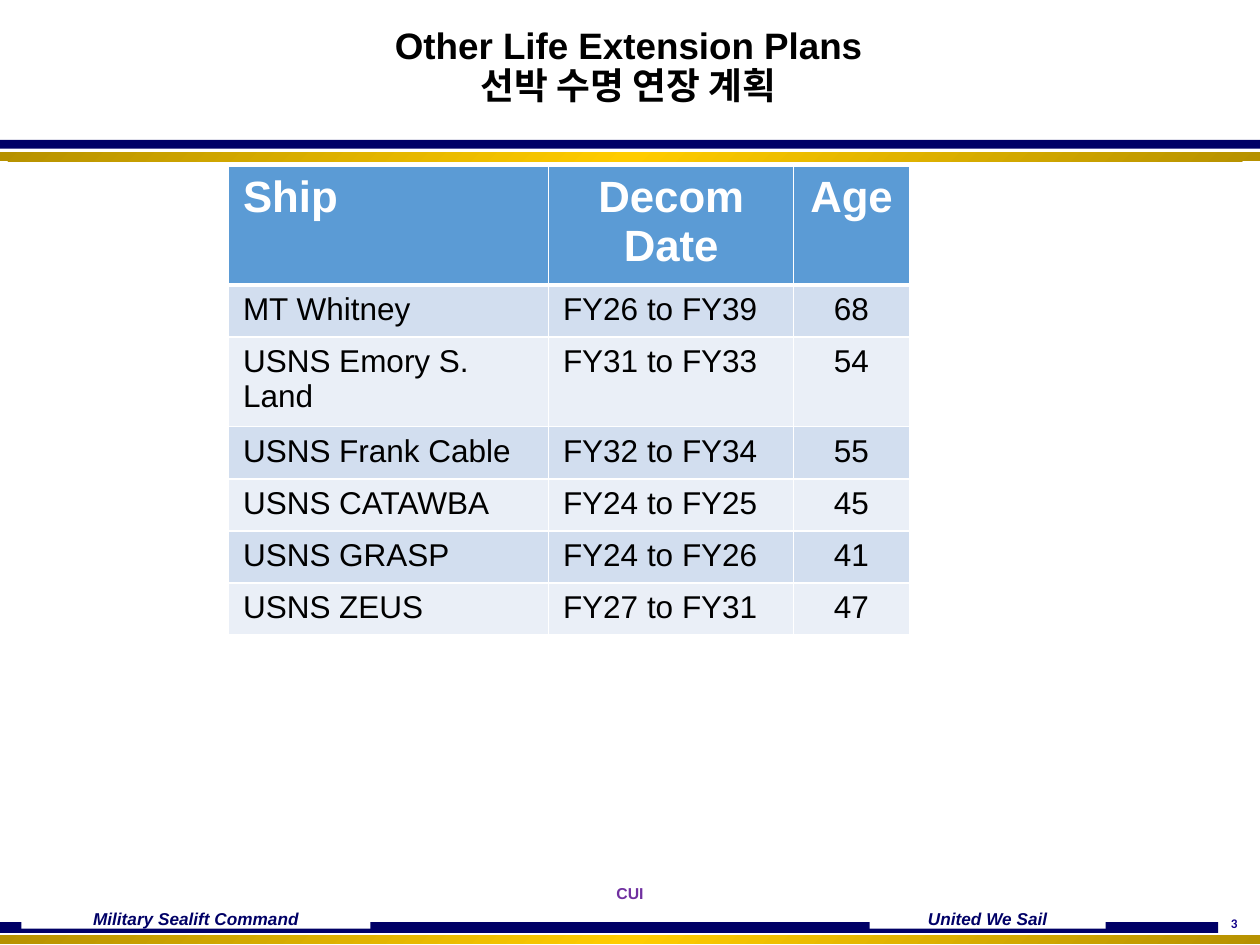
from dataclasses import dataclass
from typing import Any, NamedTuple

import pptx
import pptx.dml.color
import pptx.enum.shapes
import pptx.enum.text
import pptx.oxml
import pptx.oxml.ns
import pptx.util

Cm = pptx.util.Cm
Pt = pptx.util.Pt
CENTER = pptx.enum.text.PP_ALIGN.CENTER
LEFT = pptx.enum.text.PP_ALIGN.LEFT
TOP = pptx.enum.text.MSO_ANCHOR.TOP
MIDDLE = pptx.enum.text.MSO_ANCHOR.MIDDLE


@dataclass(frozen=True)
class Theme:
    navy: str = "000066"
    gold: str = "FFCC00"
    white: str = "FFFFFF"
    black: str = "000000"
    page_blue: str = "110189"
    marking_purple: str = "7030A0"
    header_blue: str = "5B9BD5"
    bands: tuple[str, str] = ("D2DEEF", "EAEFF7")
    title_size: float = 21
    header_size: float = 25
    body_size: float = 18
    motto_size: float = 9.8
    marking_size: float = 9
    page_size: float = 7.5
    font: str = "Arial"
    page_font: str = "Calibri"


THEME = Theme()


class Box(NamedTuple):
    """Position and size in centimetres."""
    left: float
    top: float
    width: float
    height: float

    def lengths(self) -> list[int]:
        return [Cm(value) for value in self]


class Label(NamedTuple):
    text: str
    box: Box
    size: float
    color: str
    anchor: Any = TOP
    italic: bool = False
    spacing: float = 1.0
    font: str = THEME.font
    wrap: bool = True
    fill: str | None = None
    side_only: bool = False


class Ship(NamedTuple):
    name: str
    decom: str
    age: str


def rgb(color: str) -> pptx.dml.color.RGBColor:
    return pptx.dml.color.RGBColor.from_string(color)


def apply(target: Any, values: dict[str, Any]) -> None:
    for attribute, value in values.items():
        setattr(target, attribute, value)


def style_font(font: Any, name: str, size: float, color: str,
               bold: bool = True, italic: bool = False) -> None:
    apply(font, {"name": name, "size": Pt(size), "bold": bold, "italic": italic})
    font.color.rgb = rgb(color)


def draw_bar(slide: Any, box: Box, color: str) -> Any:
    bar = slide.shapes.add_shape(
        pptx.enum.shapes.MSO_SHAPE.RECTANGLE, *box.lengths())
    bar.shadow.inherit = False
    bar.fill.solid()
    bar.fill.fore_color.rgb = rgb(color)
    bar.line.fill.background()
    return bar


def draw_gold_bar(slide: Any, box: Box) -> None:
    """Gold bar that darkens towards both ends."""
    bar = draw_bar(slide, box, THEME.gold)
    shade = '<a:shade val="46275"/>'
    stops = "".join(
        f'<a:gs pos="{pos}"><a:srgbClr val="{THEME.gold}">{change}</a:srgbClr></a:gs>'
        for pos, change in ((0, shade), (50000, ""), (100000, shade)))
    gradient = pptx.oxml.parse_xml(
        f'<a:gradFill {pptx.oxml.ns.nsdecls("a")} rotWithShape="1">'
        f'<a:gsLst>{stops}</a:gsLst><a:lin ang="2700000" scaled="1"/></a:gradFill>')
    properties = bar.fill._xPr
    properties.replace(properties.find(pptx.oxml.ns.qn("a:solidFill")), gradient)


def draw_label(slide: Any, label: Label) -> None:
    if label.fill:
        holder = draw_bar(slide, label.box, label.fill)
    else:
        holder = slide.shapes.add_textbox(*label.box.lengths())
    frame = holder.text_frame
    apply(frame, {"word_wrap": label.wrap, "vertical_anchor": label.anchor})
    if label.side_only:
        apply(frame, {"margin_top": 0, "margin_bottom": 0})
    frame.text = label.text
    paragraph = frame.paragraphs[0]
    apply(paragraph, {"alignment": CENTER, "line_spacing": label.spacing})
    for run in paragraph.runs:
        style_font(run.font, label.font, label.size, label.color,
                   italic=label.italic)


def draw_borders(cell: Any, bottom: float) -> None:
    widths = {"lnL": 1, "lnR": 1, "lnT": 1, "lnB": bottom}
    properties = cell._tc.get_or_add_tcPr()
    for position, (side, width) in enumerate(widths.items()):
        properties.insert(position, pptx.oxml.parse_xml(
            f'<a:{side} {pptx.oxml.ns.nsdecls("a")} w="{Pt(width)}"><a:solidFill>'
            f'<a:srgbClr val="{THEME.white}"/></a:solidFill></a:{side}>'))


def draw_cell(cell: Any, text: str, header: bool, fill: str, align: Any) -> None:
    apply(cell, {"text": text, "vertical_anchor": TOP,
                 "margin_left": Cm(0.29), "margin_right": Cm(0.29),
                 "margin_top": Cm(0.14), "margin_bottom": Cm(0.14)})
    cell.fill.solid()
    cell.fill.fore_color.rgb = rgb(fill)
    draw_borders(cell, 3 if header else 1)
    paragraph = cell.text_frame.paragraphs[0]
    paragraph.alignment = align
    style_font(paragraph.runs[0].font, THEME.font,
               THEME.header_size if header else THEME.body_size,
               THEME.white if header else THEME.black, bold=header)


def draw_ships(slide: Any, heading: Ship, ships: list[Ship]) -> None:
    widths, header_height, row_height = (6.45, 4.94, 2.33), 2.38, 1.05
    box = Box(4.61, 3.35, sum(widths), header_height + row_height * len(ships))
    table = slide.shapes.add_table(
        len(ships) + 1, len(widths), *box.lengths()).table
    for column, width in zip(table.columns, widths):
        column.width = Cm(width)
    for index, ship in enumerate([heading, *ships]):
        header = index == 0
        table.rows[index].height = Cm(header_height if header else row_height)
        fill = THEME.header_blue if header else THEME.bands[(index - 1) % 2]
        aligns = (LEFT, CENTER if header else LEFT, CENTER)
        for column, (text, align) in enumerate(zip(ship, aligns)):
            draw_cell(table.cell(index, column), text, header, fill, align)


HEADING = Ship("Ship", "Decom Date", "Age")
SHIPS = [
    Ship("MT Whitney", "FY26 to FY39", "68"),
    Ship("USNS Emory S. Land", "FY31 to FY33", "54"),
    Ship("USNS Frank Cable", "FY32 to FY34", "55"),
    Ship("USNS CATAWBA", "FY24 to FY25", "45"),
    Ship("USNS GRASP", "FY24 to FY26", "41"),
    Ship("USNS ZEUS", "FY27 to FY31", "47"),
]
MOTTO = {"size": THEME.motto_size, "color": THEME.navy, "anchor": MIDDLE,
         "italic": True, "fill": THEME.white, "side_only": True}
LABELS = [
    Label("3", Box(24.46, 18.39, 0.84, 0.51), THEME.page_size, THEME.page_blue,
          spacing=0.8, font=THEME.page_font, wrap=False),
    Label("Military Sealift Command", Box(0.43, 18.31, 7.04, 0.41), **MOTTO),
    Label("United We Sail", Box(17.53, 18.31, 4.76, 0.41), **MOTTO),
    Label("CUI", Box(0, 17.73, 25.4, 0.84), THEME.marking_size,
          THEME.marking_purple, spacing=0.9),
    Label("Other Life Extension Plans\v선박 수명 연장 계획", Box(0, 0, 25.35, 2.74),
          THEME.title_size, THEME.black, anchor=MIDDLE, spacing=0.9),
]


def main() -> None:
    deck = pptx.Presentation()
    apply(deck, {"slide_width": Cm(25.4), "slide_height": Cm(19.05)})
    slide = deck.slides.add_slide(deck.slide_layouts[6])

    # Navy and gold rules at the head and foot
    draw_bar(slide, Box(0, 2.82, 25.4, 0.18), THEME.navy)
    draw_gold_bar(slide, Box(0, 3.07, 25.4, 0.18))
    draw_bar(slide, Box(0, 18.59, 24.56, 0.22), THEME.navy)
    draw_gold_bar(slide, Box(0, 18.85, 25.4, 0.18))

    # Title, marking and footer texts
    for label in LABELS:
        draw_label(slide, label)

    # Life extension table
    draw_ships(slide, HEADING, SHIPS)
    deck.save("out.pptx")


if __name__ == "__main__":
    main()
